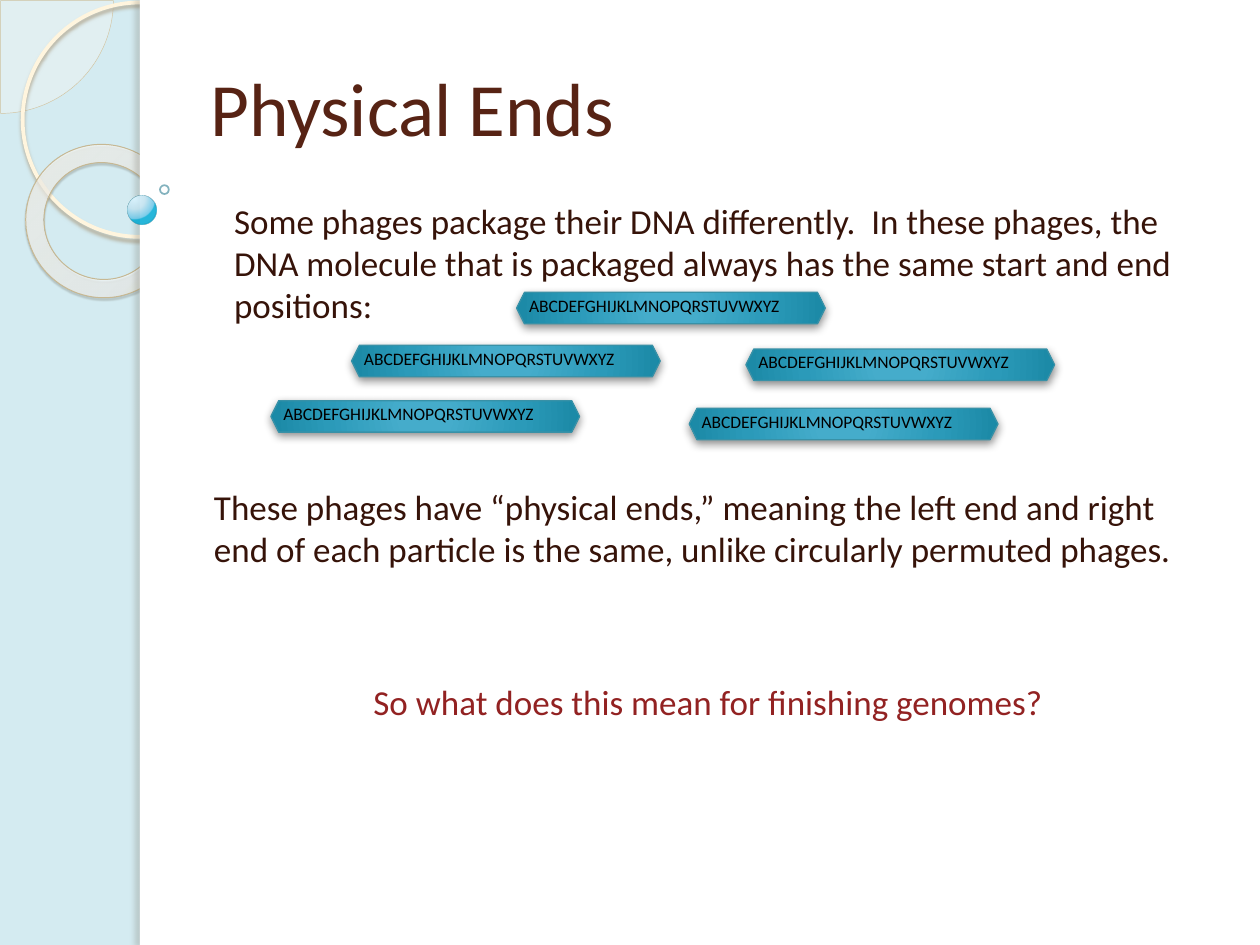
from dataclasses import dataclass
from typing import NamedTuple, Optional

from lxml.etree import SubElement
from pptx import Presentation
from pptx.dml.color import RGBColor
from pptx.enum.shapes import MSO_SHAPE as Preset
from pptx.enum.text import MSO_ANCHOR as Anchor, MSO_AUTO_SIZE as AutoSize, PP_ALIGN as Align
from pptx.oxml import parse_xml
from pptx.oxml.ns import nsdecls, qn
from pptx.util import Inches, Pt

COLUMNS, ROWS = 1000, 750
CELL = Inches(10) // COLUMNS
FONT = "Calibri"

WHITE = RGBColor(0xFF, 0xFF, 0xFF)
BLACK = RGBColor(0x00, 0x00, 0x00)
PALE_BLUE = RGBColor(0xD4, 0xEB, 0xF1)
CREAM = RGBColor(0xFE, 0xFA, 0xF4)
SAND = RGBColor(0xD3, 0xC3, 0x9F)
IVORY = RGBColor(0xFF, 0xF5, 0xDE)
KHAKI = RGBColor(0xC7, 0xB8, 0x93)
KHAKI_SHADE = RGBColor(0xB0, 0xA6, 0x8F)
OLIVE_SHADE = RGBColor(0x5A, 0x54, 0x44)
GREY_SHADE = RGBColor(0x73, 0x6F, 0x63)
TEAL = RGBColor(0x30, 0x8E, 0xA5)
DARK_TEAL = RGBColor(0x31, 0x80, 0x93)
PHAGE_LINE = RGBColor(0x38, 0x91, 0xA7)
TITLE_BROWN = RGBColor(0x57, 0x23, 0x14)
BODY_BROWN = RGBColor(0x36, 0x13, 0x09)
QUESTION_RED = RGBColor(0x92, 0x22, 0x22)


class Box(NamedTuple):
    column: int
    row: int
    columns: int
    rows: int

    def lengths(self) -> list:
        return [cells * CELL for cells in self]


class Stop(NamedTuple):
    position: int
    color: RGBColor
    opacity: int = 100


class Gradient(NamedTuple):
    focus: tuple
    stops: tuple


class Line(NamedTuple):
    color: RGBColor
    width: float
    opacity: int = 100


class Shadow(NamedTuple):
    color: RGBColor
    opacity: int
    blur: float
    distance: float
    direction: int


@dataclass
class Figure:
    preset: Preset
    box: Box
    fill: Optional[object] = None
    opacity: int = 100
    line: Optional[Line] = None
    shadow: Optional[Shadow] = None
    adjustments: tuple = ()
    rotation: float = 0


@dataclass
class Text:
    words: str
    box: Box
    size: int
    color: RGBColor
    align: Align = Align.LEFT
    anchor: Anchor = Anchor.TOP
    grows: bool = False
    is_body: bool = False


RING_GRADIENT = Gradient((-408, -50, 508, 150), (
    Stop(0, RGBColor(0xFF, 0xFC, 0xF6), 70),
    Stop(70, RGBColor(0xFF, 0xFE, 0xFB), 55),
    Stop(100, RGBColor(0xF0, 0xD2, 0x8E), 60)))
BUBBLE_GRADIENT = Gradient((25, 12, 75, 88), (
    Stop(0, RGBColor(0xDA, 0xF4, 0xFF), 95),
    Stop(50, RGBColor(0xC3, 0xE3, 0xF0), 90),
    Stop(95, RGBColor(0x6B, 0xC7, 0xE8), 88),
    Stop(100, RGBColor(0x00, 0xAB, 0xD5), 85)))
PHAGE_GRADIENT = Gradient((50, 50, 50, 50), (
    Stop(0, RGBColor(0x45, 0xAC, 0xCC)),
    Stop(15, RGBColor(0x45, 0xAC, 0xCB)),
    Stop(62, RGBColor(0x2B, 0x9A, 0xB9)),
    Stop(97, RGBColor(0x1C, 0x8A, 0xA7)),
    Stop(100, RGBColor(0x0E, 0x89, 0xA7))))

DECORATIONS = (
    Figure(Preset.PIE, Box(-89, -89, 179, 179), CREAM, 33, Line(SAND, 0.25), adjustments=(0, 54)),
    Figure(Preset.OVAL, Box(18, 2, 186, 186), line=Line(IVORY, 2.15),
           shadow=Shadow(KHAKI_SHADE, 85, 2, 2, 90)),
    Figure(Preset.DONUT, Box(20, 115, 123, 121), RING_GRADIENT, line=Line(KHAKI, 0.58),
           shadow=Shadow(OLIVE_SHADE, 35, 1, 1.2, 75), adjustments=(0.12,), rotation=38.6),
    Figure(Preset.RECTANGLE, Box(111, 0, COLUMNS - 111, ROWS), WHITE),
    Figure(Preset.RECTANGLE, Box(111, 0, 8, ROWS), WHITE, shadow=Shadow(GREY_SHADE, 25, 3, 3, 180)),
    Figure(Preset.OVAL, Box(101, 155, 23, 23), BUBBLE_GRADIENT, line=Line(TEAL, 0.16, 60)),
    Figure(Preset.OVAL, Box(127, 147, 7, 7), line=Line(DARK_TEAL, 1, 60)),
)

PHAGE_POSITIONS = ((279, 274), (215, 318), (547, 324), (592, 277), (410, 232))

TEXTS = (
    Text("Physical Ends", Box(157, 39, 810, 86), 43, TITLE_BROWN, anchor=Anchor.BOTTOM),
    Text("These phages have “physical ends,” meaning the left end and right end of each "
         "particle is the same, unlike circularly permuted phages.",
         Box(157, 385, 810, 151), 20, BODY_BROWN, is_body=True),
    Text("Some phages package their DNA differently.  In these phages, the DNA molecule "
         "that is packaged always has the same start and end positions:",
         Box(173, 158, 810, 151), 20, BODY_BROWN, is_body=True),
    Text("So what does this mean for finishing genomes?",
         Box(157, 535, 810, 61), 20, QUESTION_RED, Align.CENTER, grows=True),
)


def add_alpha(color_element, opacity: int) -> None:
    if opacity < 100:
        SubElement(color_element, qn("a:alpha"), val=str(opacity * 1000))


def gradient_element(gradient: Gradient):
    element = parse_xml(f'<a:gradFill {nsdecls("a")} rotWithShape="1"><a:gsLst/>'
                        '<a:path path="circle"><a:fillToRect/></a:path></a:gradFill>')
    for stop in gradient.stops:
        stop_element = SubElement(element[0], qn("a:gs"), pos=str(stop.position * 1000))
        add_alpha(SubElement(stop_element, qn("a:srgbClr"), val=str(stop.color)), stop.opacity)
    for side, share in zip("ltrb", gradient.focus):
        element[1][0].set(side, str(share * 1000))
    return element


def draw_figure(shapes, figure: Figure) -> None:
    shape = shapes.add_shape(figure.preset, *figure.box.lengths())
    shape.rotation = figure.rotation
    for index, value in enumerate(figure.adjustments):
        shape.adjustments[index] = value
    properties = shape._element.spPr
    if isinstance(figure.fill, Gradient):
        properties.find(qn("a:prstGeom")).addnext(gradient_element(figure.fill))
    elif figure.fill is None:
        shape.fill.background()
    else:
        shape.fill.solid()
        shape.fill.fore_color.rgb = figure.fill
        add_alpha(properties.find(f'{qn("a:solidFill")}/{qn("a:srgbClr")}'), figure.opacity)
    if figure.line:
        shape.line.color.rgb = figure.line.color
        shape.line.width = Pt(figure.line.width)
        add_alpha(properties.find(f'{qn("a:ln")}//{qn("a:srgbClr")}'), figure.line.opacity)
    else:
        shape.line.fill.background()
    shape.shadow.inherit = False
    if figure.shadow:
        shadow = figure.shadow
        outer = SubElement(properties.find(qn("a:effectLst")), qn("a:outerShdw"),
                           blurRad=str(Pt(shadow.blur)), dist=str(Pt(shadow.distance)),
                           dir=str(shadow.direction * 60000), algn="ctr", rotWithShape="0")
        add_alpha(SubElement(outer, qn("a:srgbClr"), val=str(shadow.color)), shadow.opacity)


def draw_text(shapes, text: Text) -> None:
    text_frame = shapes.add_textbox(*text.box.lengths()).text_frame
    text_frame.text = text.words
    text_frame.word_wrap = True
    text_frame.vertical_anchor = text.anchor
    text_frame.auto_size = AutoSize.SHAPE_TO_FIT_TEXT if text.grows else AutoSize.NONE
    paragraph = text_frame.paragraphs[0]
    paragraph.alignment = text.align
    if text.is_body:
        text_frame.margin_top = 0
        paragraph.space_before = Pt(6)
        paragraph._p.get_or_add_pPr().set("marL", str(Inches(0.03)))
    font = paragraph.runs[0].font
    font.name, font.size, font.color.rgb = FONT, Pt(text.size), text.color


def draw_phage(shapes, column: int, row: int) -> None:
    group = shapes.add_group_shape()
    draw_figure(group.shapes, Figure(Preset.HEXAGON, Box(column, row, 245, 25), PHAGE_GRADIENT,
                                     line=Line(PHAGE_LINE, 0.75), shadow=Shadow(BLACK, 43, 5, 2, 90)))
    draw_text(group.shapes, Text("ABCDEFGHIJKLMNOPQRSTUVWXYZ", Box(column, row - 3, 289, 44),
                                 10, BLACK, grows=True))


def main() -> None:
    presentation = Presentation()
    presentation.slide_width, presentation.slide_height = COLUMNS * CELL, ROWS * CELL
    slide = presentation.slides.add_slide(presentation.slide_layouts[6])
    slide.background.fill.solid()
    slide.background.fill.fore_color.rgb = PALE_BLUE
    for figure in DECORATIONS:
        draw_figure(slide.shapes, figure)
    for column, row in PHAGE_POSITIONS:
        draw_phage(slide.shapes, column, row)
    for text in TEXTS:
        draw_text(slide.shapes, text)
    presentation.save("out.pptx")


if __name__ == "__main__":
    main()
